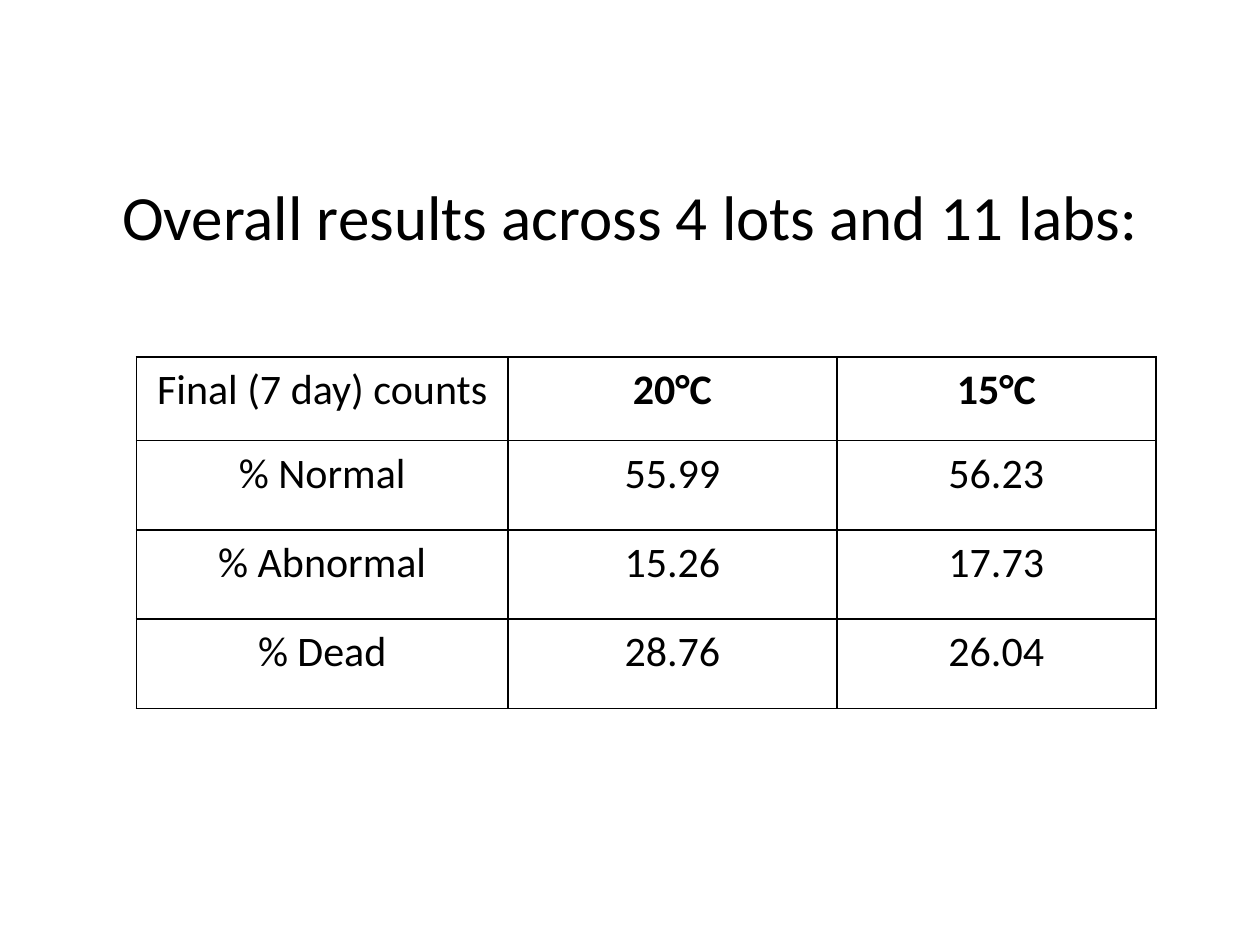
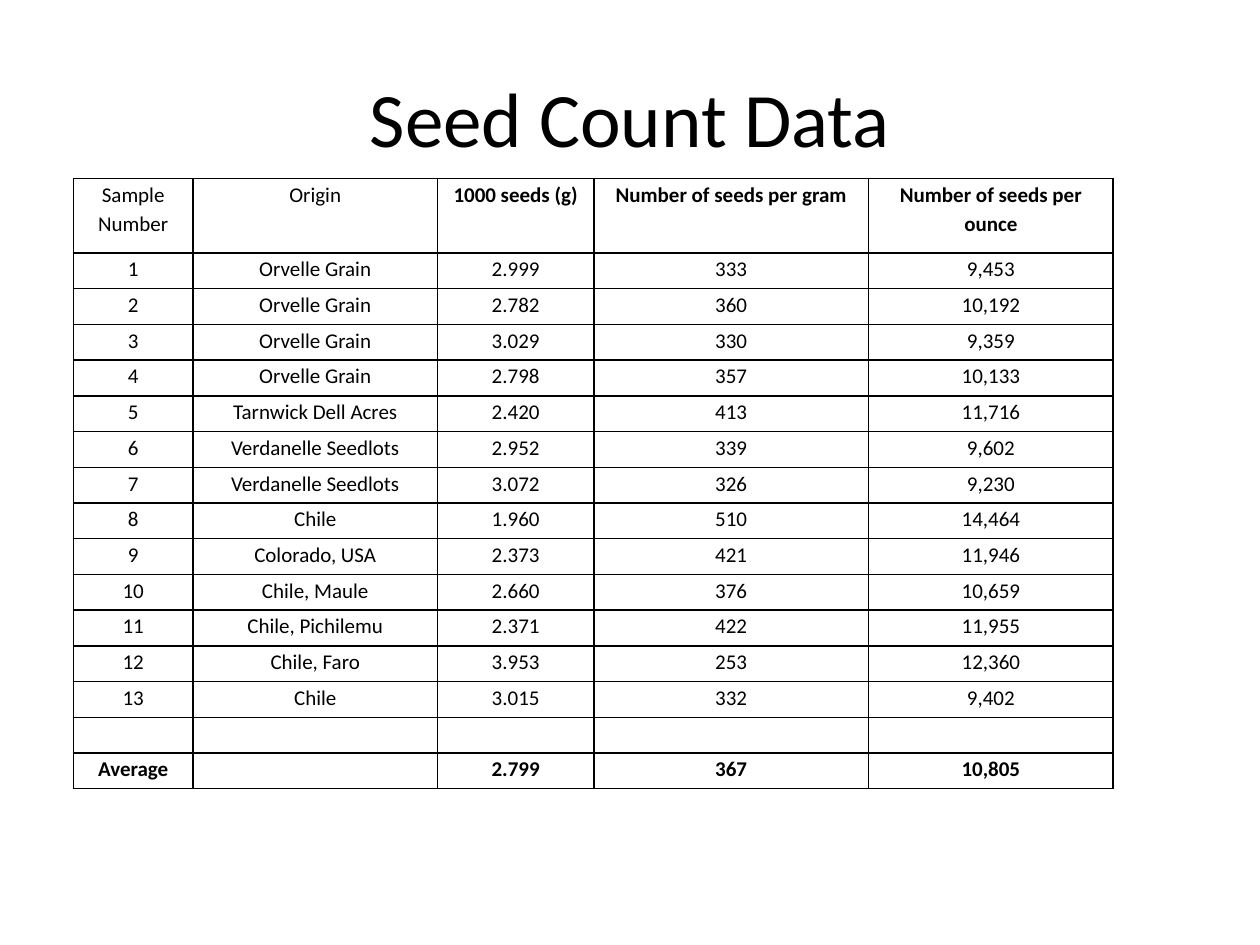
from lxml import etree
from pptx import Presentation
from pptx.dml.color import RGBColor
from pptx.enum.text import MSO_ANCHOR, PP_ALIGN
from pptx.oxml.ns import qn
from pptx.util import Cm, Pt

BLACK = RGBColor(0x00, 0x00, 0x00)
FONT = "Calibri"
CENTER = PP_ALIGN.CENTER
MIDDLE = MSO_ANCHOR.MIDDLE
BORDER_WIDTH = Pt(1)

GRAIN = "Orvelle Grain"
ACRES = "Tarnwick Dell Acres"
GARDEN = "Verdanelle Seedlots"

RESULTS = [
    ("Final (7 day) counts", "20°C", "15°C"),
    ("% Normal", "55.99", "56.23"),
    ("% Abnormal", "15.26", "17.73"),
    ("% Dead", "28.76", "26.04"),
]

SEED_COUNTS = [
    ("Sample Number", "Origin", "1000 seeds (g)", "Number of seeds per gram", "Number of seeds per ounce"),
    ("1", GRAIN, "2.999", "333", "9,453"),
    ("2", GRAIN, "2.782", "360", "10,192"),
    ("3", GRAIN, "3.029", "330", "9,359"),
    ("4", GRAIN, "2.798", "357", "10,133"),
    ("5", ACRES, "2.420", "413", "11,716"),
    ("6", GARDEN, "2.952", "339", "9,602"),
    ("7", GARDEN, "3.072", "326", "9,230"),
    ("8", "Chile", "1.960", "510", "14,464"),
    ("9", "Colorado, USA", "2.373", "421", "11,946"),
    ("10", "Chile, Maule", "2.660", "376", "10,659"),
    ("11", "Chile, Pichilemu", "2.371", "422", "11,955"),
    ("12", "Chile, Faro", "3.953", "253", "12,360"),
    ("13", "Chile", "3.015", "332", "9,402"),
    ("", "", "", "", ""),
    ("Average", "", "2.799", "367", "10,805"),
]

# title, title top, title size, data, table left and top,
# column widths, header height, row height, text size, plain header columns
SLIDES = [
    ("Overall results across 4 lots and 11 labs:", 2.75, 36, RESULTS, 2.75, 7.2,
     (7.49, 6.63, 6.43), 1.68, 1.8, 24, 1),
    ("Seed Count Data", 0.76, 44, SEED_COUNTS, 1.48, 3.6,
     (2.41, 4.93, 3.15, 5.54, 4.93), 1.5, 0.72, 12, 2),
]


def format_paragraph(p, size, bold=False):
    p.alignment = CENTER
    p.font.name = FONT
    p.font.size = Pt(size)
    p.font.bold = bold
    p.font.color.rgb = BLACK


def add_borders(cell):
    tcPr = cell._tc.get_or_add_tcPr()
    for i, side in enumerate(("lnL", "lnR", "lnT", "lnB")):
        ln = etree.Element(qn(f"a:{side}"), w=str(BORDER_WIDTH))
        fill = etree.SubElement(ln, qn("a:solidFill"))
        etree.SubElement(fill, qn("a:srgbClr"), val=str(BLACK))
        tcPr.insert(i, ln)


prs = Presentation()
prs.slide_width, prs.slide_height = Cm(25.4), Cm(19.05)
title_only = prs.slide_layouts[5]

for (title, title_top, title_size, data, left, top,
     widths, header_height, row_height, size, plain_headers) in SLIDES:
    s = prs.slides.add_slide(title_only)
    sp = s.shapes.title
    sp.left, sp.top, sp.width, sp.height = Cm(1.27), Cm(title_top), Cm(22.86), Cm(3.18)
    tf = sp.text_frame
    tf.text = title
    tf.vertical_anchor = MIDDLE
    format_paragraph(tf.paragraphs[0], title_size)

    heights = [header_height] + [row_height] * (len(data) - 1)
    table = s.shapes.add_table(len(data), len(widths), Cm(left), Cm(top),
                               Cm(sum(widths)), Cm(sum(heights))).table
    table.first_row = table.horz_banding = False
    for column, width in zip(table.columns, widths):
        column.width = Cm(width)
    for row, height in zip(table.rows, heights):
        row.height = Cm(height)

    for r, values in enumerate(data):
        for c, value in enumerate(values):
            cell = table.cell(r, c)
            cell.margin_left = cell.margin_right = Cm(0.18)
            cell.margin_top = cell.margin_bottom = 0
            cell.fill.background()
            add_borders(cell)
            cell.text = value
            p = cell.text_frame.paragraphs[0]
            p.line_spacing = 1.15
            bold = (r == 0 and c >= plain_headers) or values[0] == "Average"
            format_paragraph(p, size, bold)

prs.save("out.pptx")
